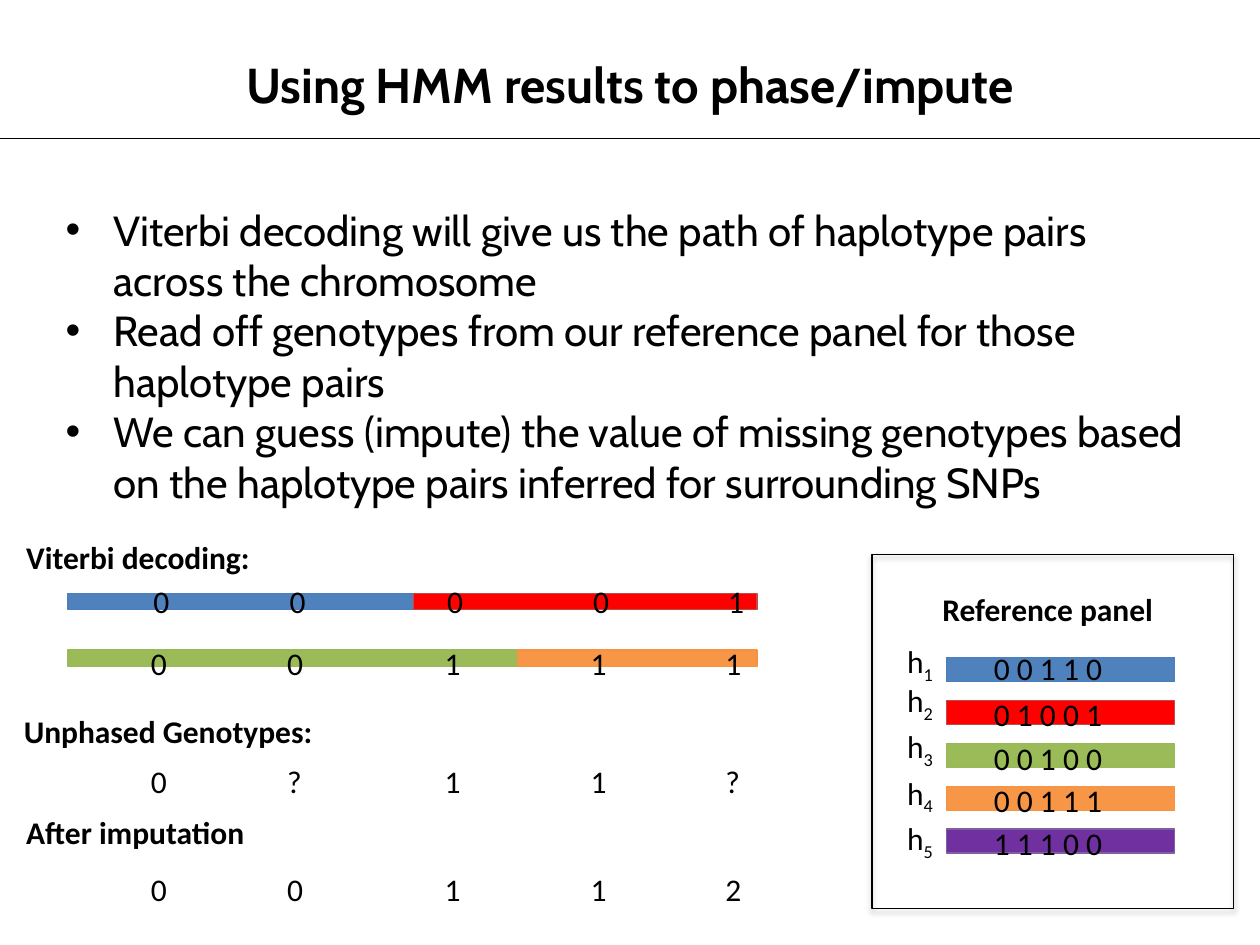
from lxml import etree
from pptx import Presentation, util as u
from pptx.dml.color import RGBColor
from pptx.enum import shapes, text
from pptx.oxml import parse_xml
from pptx.oxml.ns import nsdecls, qn

COLORS = {
    "black": "000000",
    "blue": "4F81BD", "blue edge": "4B7EBC",
    "red": "FF0000", "red edge": "BF4C48",
    "green": "9BBB59", "green edge": "98B955",
    "orange": "F79646", "orange edge": "F69240",
    "purple": "7030A0", "purple edge": "7D60A0",
}
TITLE = "Using HMM results to phase/impute"
BULLETS = [
    "Viterbi decoding will give us the path of haplotype pairs across the chromosome",
    "Read off genotypes from our reference panel for those haplotype pairs",
    "We can guess (impute) the value of missing genotypes based on the haplotype pairs "
    "inferred for surrounding SNPs",
]
HEADINGS = [
    ("Viterbi decoding:", 0.11, 4.22, 1.99),
    ("Unphased Genotypes:", 0.09, 5.6, 2.51),
    ("After imputation", 0.11, 6.4, 1.96),
]
SNP_COLUMNS = [1.1, 2.18, 3.43, 4.59, 5.66]
SNP_ROWS = [
    ("00001", 4.57, 0.02),
    ("00111", 5.06, 0),
    ("0?11?", 6, 0),
    ("00112", 6.86, 0),
]
PATH_LEFT, PATH_RIGHT, PATH_HEIGHT = 0.54, 6.01, 0.13
PATHS = [
    (4.71, "blue", "red", 3.28),
    (5.16, "green", "orange", 4.11),
]
PANEL = [
    ("blue", "0 0 1 1 0", 5.05, 5.1),
    ("red", "0 1 0 0 1", 5.36, 5.47),
    ("green", "0 0 1 0 0", 5.72, 5.82),
    ("orange", "0 0 1 1 1", 6.09, 6.15),
    ("purple", "1 1 1 0 0", 6.45, 6.49),
]
PANEL_TOP, PANEL_PITCH = 5.22, 0.34
LINE_HEIGHT = 0.4

presentation = Presentation()
presentation.slide_width, presentation.slide_height = u.Inches(10), u.Inches(7.5)
slide = presentation.slides.add_slide(presentation.slide_layouts[1])


def color(name):
    return RGBColor.from_string(COLORS[name])


def place(shape, left, top, width, height):
    shape.left, shape.top = u.Inches(left), u.Inches(top)
    shape.width, shape.height = u.Inches(width), u.Inches(height)


def style(font, name, size, bold=False):
    font.name, font.size, font.bold = name, u.Pt(size), bold
    font.color.rgb = color("black")


def add_label(content, left, top, width, bold=False, align=text.PP_ALIGN.LEFT, subscript=""):
    box = slide.shapes.add_textbox(*map(u.Inches, (left, top, width, LINE_HEIGHT)))
    box.text_frame.word_wrap = False
    paragraph = box.text_frame.paragraphs[0]
    paragraph.text = content
    paragraph.alignment = align
    if subscript:
        run = paragraph.add_run()
        run.text = subscript
        run.font._element.set("baseline", "-25000")
    for run in paragraph.runs:
        style(run.font, "Calibri", 18, bold)


def add_rectangle(left, top, width, height, fill=None):
    shape = slide.shapes.add_shape(
        shapes.MSO_SHAPE.RECTANGLE, *map(u.Inches, (left, top, width, height)))
    shape.shadow.inherit = False
    shape.line.width = u.Pt(0.75)
    if fill:
        shape.fill.solid()
        shape.fill.fore_color.rgb = color(fill)
        shape.line.color.rgb = color(fill + " edge")
    else:
        shape.fill.background()
        shape.line.color.rgb = color("black")
    return shape


def fill_placeholders():
    title, body = slide.shapes.title, slide.placeholders[1]
    place(title, 0, 0.38, 10, 0.57)
    place(body, 0.42, 1.57, 9.21, 2.52)
    title.text_frame.text = TITLE
    title.text_frame.paragraphs[0].alignment = text.PP_ALIGN.CENTER
    style(title.text_frame.paragraphs[0].runs[0].font, "Cabin", 28, True)
    body.text_frame.text = "\n".join(BULLETS)
    for paragraph in body.text_frame.paragraphs:
        properties = paragraph._p.get_or_add_pPr()
        properties.set("marL", str(u.Inches(0.38)))
        properties.set("indent", str(u.Inches(-0.38)))
        etree.SubElement(properties, qn("a:buFont")).set("typeface", "Arial")
        etree.SubElement(properties, qn("a:buChar")).set("char", "•")
        paragraph.space_before = u.Pt(0)
        style(paragraph.runs[0].font, "Cabin", 24)
    for shape in (title, body):
        shape.text_frame.auto_size = text.MSO_AUTO_SIZE.NONE
        shape.text_frame.word_wrap = True


def add_rule():
    rule = slide.shapes.add_connector(
        shapes.MSO_CONNECTOR.STRAIGHT, 0, u.Inches(1.1), u.Inches(10), u.Inches(1.1))
    rule.line.color.rgb = color("black")
    rule.line.width = u.Pt(0.75)
    etree.SubElement(rule._element.spPr, qn("a:effectLst"))


def add_decoding():
    for top, first, second, switch in PATHS:
        add_rectangle(PATH_LEFT, top, switch - PATH_LEFT, PATH_HEIGHT, first)
        add_rectangle(switch, top, PATH_RIGHT - switch, PATH_HEIGHT, second)
    for heading, left, top, width in HEADINGS:
        add_label(heading, left, top, width, bold=True)
    for alleles, top, shift in SNP_ROWS:
        for left, allele in zip(SNP_COLUMNS, alleles):
            add_label(allele, left + shift, top, 0.33)


def add_reference_panel():
    frame = add_rectangle(6.92, 4.4, 2.87, 2.81)
    effects = frame._element.spPr.find(qn("a:effectLst"))
    effects.append(parse_xml(
        f'<a:outerShdw {nsdecls("a")} blurRad="{u.Pt(3.1)}" dist="{u.Pt(1.8)}" dir="5400000" '
        'rotWithShape="0"><a:srgbClr val="000000"><a:alpha val="35000"/></a:srgbClr></a:outerShdw>'))
    add_label("Reference panel", 7.27, 4.63, 2.09, bold=True, align=text.PP_ALIGN.CENTER)
    for index, (fill, alleles, name_top, alleles_top) in enumerate(PANEL):
        add_rectangle(7.51, PANEL_TOP + index * PANEL_PITCH, 1.81, 0.19, fill)
        add_label("h", 7.1, name_top, 0.42, subscript=str(index + 1))
        add_label(alleles, 7.79, alleles_top, 1.07)


fill_placeholders()
add_rule()
add_decoding()
add_reference_panel()
presentation.save("out.pptx")
